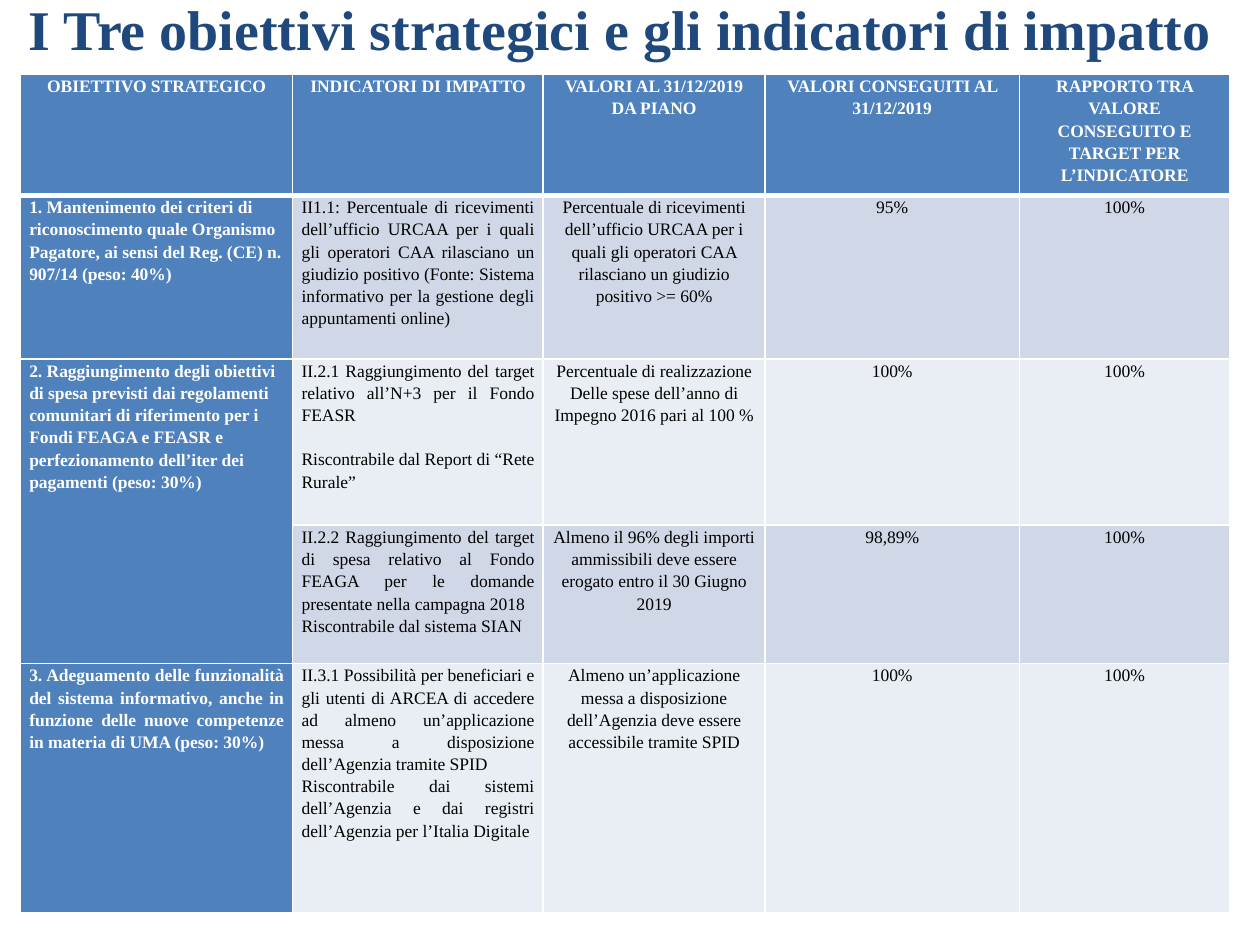
from pptx import Presentation
from pptx.dml.color import RGBColor
from pptx.enum.text import MSO_ANCHOR, MSO_AUTO_SIZE, PP_ALIGN
from pptx.oxml import parse_xml
from pptx.oxml.ns import nsdecls
from pptx.util import Cm, Pt

WHITE, BLACK, BLUE, NAVY = "FFFFFF", "000000", "4F81BD", "1F497D"
BANDS = ["D0D8E8", "E9EDF4"]
LEFT, CENTER, JUSTIFY = PP_ALIGN.LEFT, PP_ALIGN.CENTER, PP_ALIGN.JUSTIFY


def write(frame, text, size=10, color=BLACK, bold=False, align=LEFT,
          spacing=1.15, gap=0, after=0):
    for index, line in enumerate(text.split("\n")):
        para = frame.paragraphs[0] if index == 0 else frame.add_paragraph()
        para.alignment = align
        para.line_spacing = spacing
        para.space_before = Pt(gap if index else 0)
        para.space_after = Pt(after)
        span = para.add_run()
        span.text = line
        span.font.name = "Times New Roman"
        span.font.size = Pt(size)
        span.font.bold = bold
        span.font.color.rgb = RGBColor.from_string(color)


def paint(cell, color, bottom=1):
    properties = cell._tc.get_or_add_tcPr()
    for side, width in zip("LRTB", [1, 1, 1, bottom]):
        properties.append(parse_xml(
            f'<a:ln{side} {nsdecls("a")} w="{Pt(width)}"><a:solidFill>'
            f'<a:srgbClr val="{WHITE}"/></a:solidFill></a:ln{side}>'))
    cell.fill.solid()
    cell.fill.fore_color.rgb = RGBColor.from_string(color)
    cell.margin_left = cell.margin_right = Cm(0.18)
    cell.margin_top = cell.margin_bottom = 0


headers = [
    "OBIETTIVO STRATEGICO",
    "INDICATORI DI IMPATTO",
    "VALORI AL 31/12/2019 DA PIANO",
    "VALORI CONSEGUITI AL 31/12/2019",
    "RAPPORTO TRA VALORE CONSEGUITO E TARGET PER L’INDICATORE",
]
goals = [
    ["1. Mantenimento dei criteri di riconoscimento quale Organismo Pagatore, "
     "ai sensi del Reg. (CE) n. 907/14 (peso: 40%)",
     "II1.1: Percentuale di ricevimenti dell’ufficio URCAA per i quali gli "
     "operatori CAA rilasciano un giudizio positivo (Fonte: Sistema "
     "informativo per la gestione degli appuntamenti online)",
     "Percentuale di ricevimenti dell’ufficio URCAA per i quali gli operatori "
     "CAA rilasciano un giudizio positivo >= 60%",
     "95%", "100%"],
    ["2. Raggiungimento degli obiettivi di spesa previsti dai regolamenti "
     "comunitari di riferimento per i Fondi FEAGA e FEASR e perfezionamento "
     "dell’iter dei pagamenti (peso: 30%)",
     "II.2.1 Raggiungimento del target relativo all’N+3 per il Fondo FEASR\n"
     "Riscontrabile dal Report di “Rete Rurale”",
     "Percentuale di realizzazione Delle spese dell’anno di Impegno 2016 pari "
     "al 100 %",
     "100%", "100%"],
    ["",
     "II.2.2 Raggiungimento del target di spesa relativo al Fondo FEAGA per le "
     "domande presentate nella campagna 2018\nRiscontrabile dal sistema SIAN",
     "Almeno il 96% degli importi ammissibili deve essere erogato entro il 30 "
     "Giugno 2019",
     "98,89%", "100%"],
    ["3. Adeguamento delle funzionalità del sistema informativo, anche in "
     "funzione delle nuove competenze in materia di UMA (peso: 30%)",
     "II.3.1 Possibilità per beneficiari e gli utenti di ARCEA di accedere ad "
     "almeno un’applicazione messa a disposizione dell’Agenzia tramite SPID\n"
     "Riscontrabile dai sistemi dell’Agenzia e dai registri dell’Agenzia per "
     "l’Italia Digitale",
     "Almeno un’applicazione messa a disposizione dell’Agenzia deve essere "
     "accessibile tramite SPID",
     "100%", "100%"],
]
column_widths = [5.49, 5.05, 4.47, 5.13, 4.24]
row_heights = [1.5, 3.3, 3.35, 2.79, 5.03]

deck = Presentation()
deck.slide_width, deck.slide_height = Cm(25.4), Cm(19.05)
page = deck.slides.add_slide(deck.slide_layouts[5])

title = page.shapes.title
title.left, title.top, title.width, title.height = Cm(0.33), Cm(-0.23), Cm(24.59), Cm(1.63)
title.text_frame.word_wrap = False
title.text_frame.auto_size = MSO_AUTO_SIZE.SHAPE_TO_FIT_TEXT
title.text_frame.vertical_anchor = MSO_ANCHOR.TOP
write(title.text_frame, "I Tre obiettivi strategici e gli indicatori di impatto",
      size=32, color=NAVY, bold=True, spacing=1.0)

table = page.shapes.add_table(
    len(row_heights), len(column_widths), Cm(0.41), Cm(1.5),
    Cm(sum(column_widths)), Cm(sum(row_heights))).table
table.horz_banding = False
for column, width in zip(table.columns, column_widths):
    column.width = Cm(width)
for row, height in zip(table.rows, row_heights):
    row.height = Cm(height)
table.cell(2, 0).merge(table.cell(3, 0))

for column, header in enumerate(headers):
    cell = table.cell(0, column)
    paint(cell, BLUE, bottom=3)
    write(cell.text_frame, header, color=WHITE, bold=True, align=CENTER)

for row, goal in enumerate(goals, start=1):
    for column, text in enumerate(goal):
        cell = table.cell(row, column)
        paint(cell, BLUE if column == 0 else BANDS[(row - 1) % 2])
        if column == 0 and text:
            last = row == len(goals)
            write(cell.text_frame, text, color=WHITE, bold=True,
                  align=JUSTIFY if last else LEFT, after=0 if last else 6)
        elif column == 1:
            write(cell.text_frame, text, align=JUSTIFY, gap=12.6 if row == 2 else 0)
        elif column > 1:
            write(cell.text_frame, text, align=CENTER)

deck.save("out.pptx")
